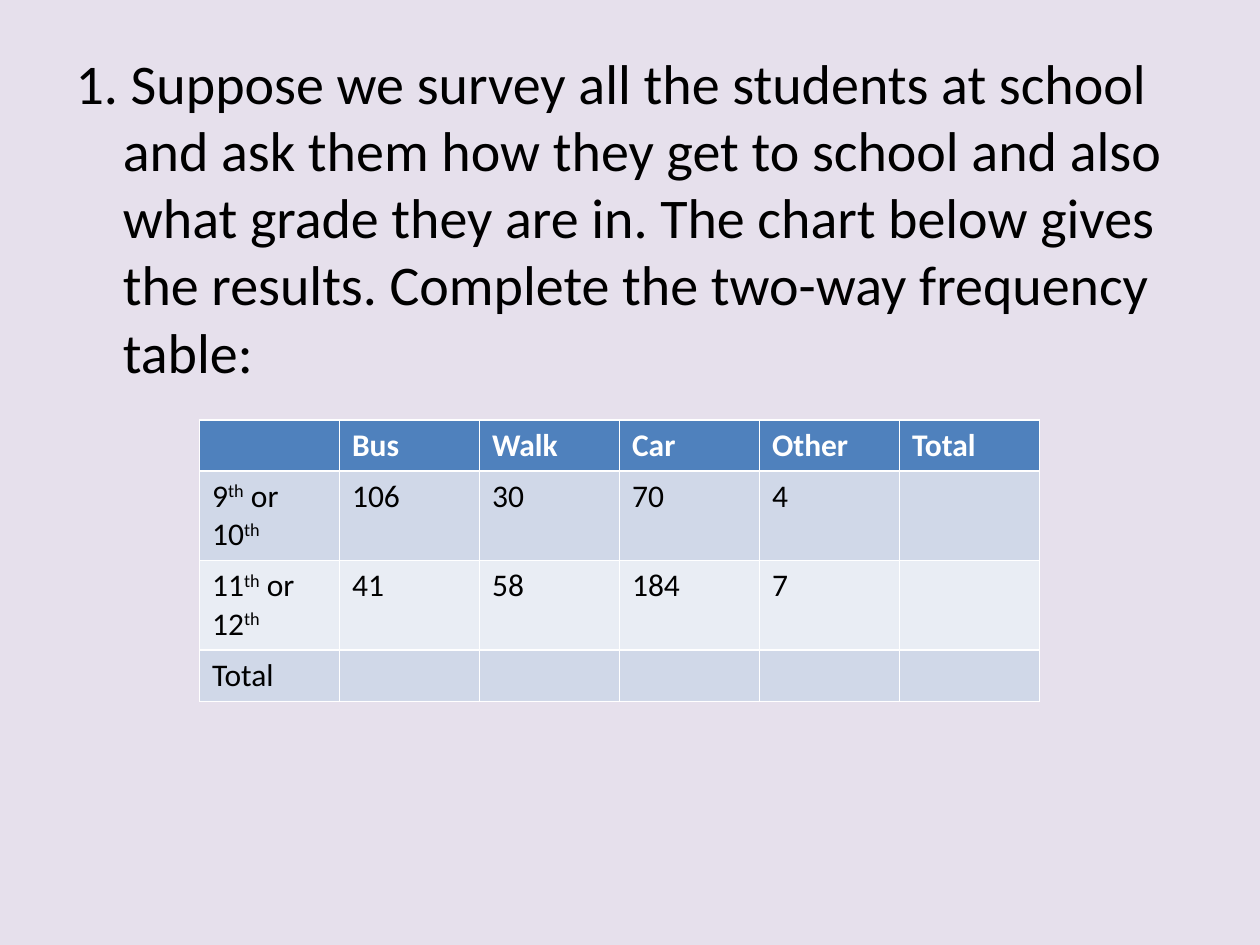
"""Build a slide with a survey question and its two-way frequency table."""
from pptx import Presentation
from pptx.dml.color import RGBColor
from pptx.oxml.xmlchemy import OxmlElement
from pptx.util import Pt

HUES = {"page": "E6E0EC", "head": "4F81BD", "odd": "D0D8E8",
        "even": "E9EDF4", "ink": "000000", "white": "FFFFFF"}
TASK = ("1. Suppose we survey all the students at school and ask them how "
        "they get to school and also what grade they are in. The chart below "
        "gives the results. Complete the two-way frequency table:")
ROWS = [["", "Bus", "Walk", "Car", "Other", "Total"],
        ["9th or 10th", "106", "30", "70", "4", ""],
        ["11th or 12th", "41", "58", "184", "7", ""],
        ["Total", "", "", "", "", ""]]


def tint(fill, hue):
    fill.solid()
    fill.fore_color.rgb = RGBColor.from_string(HUES[hue])


def style(run, size, hue, bold=False):
    font = run.font
    font.name, font.size, font.bold = "Calibri", Pt(size), bold
    font.color.rgb = RGBColor.from_string(HUES[hue])


def add_task(slide):
    body = slide.placeholders[1]
    body.left, body.top = Pt(36), Pt(24)
    body.width, body.height = Pt(648), Pt(458.5)
    para = body.text_frame.paragraphs[0]
    para.text = TASK
    props = para._p.get_or_add_pPr()
    props.set("marL", str(Pt(27)))
    props.set("indent", str(-Pt(27)))
    props.append(OxmlElement("a:buNone"))
    style(para.runs[0], 32, "ink")


def add_grade(para, text):
    """Write a row label with each ordinal ending raised."""
    first, *rest = text.split("th")
    para.add_run().text = first
    for part in rest:
        end = para.add_run()
        end.text = "th"
        end.font._element.set("baseline", "30000")
        if part:
            para.add_run().text = part


def fill_cell(cell, text, row, col):
    head = row == 0
    tint(cell.fill, "head" if head else "odd" if row % 2 else "even")
    para = cell.text_frame.paragraphs[0]
    if text and col == 0:
        add_grade(para, text)
    elif text:
        para.text = text
    for run in para.runs:
        style(run, 18, "white" if head else "ink", head)


def add_grid(slide):
    rows, cols = len(ROWS), len(ROWS[0])
    table = slide.shapes.add_table(rows, cols, Pt(114), Pt(240),
                                   Pt(80 * cols), Pt(29.2 * rows)).table
    for row, texts in enumerate(ROWS):
        for col, text in enumerate(texts):
            fill_cell(table.cell(row, col), text, row, col)


def main():
    deck = Presentation()
    deck.slide_width, deck.slide_height = Pt(720), Pt(540)
    slide = deck.slides.add_slide(deck.slide_layouts[1])
    tint(slide.background.fill, "page")
    title = slide.shapes.title._element
    title.getparent().remove(title)
    add_task(slide)
    add_grid(slide)
    deck.save("out.pptx")


if __name__ == "__main__":
    main()
